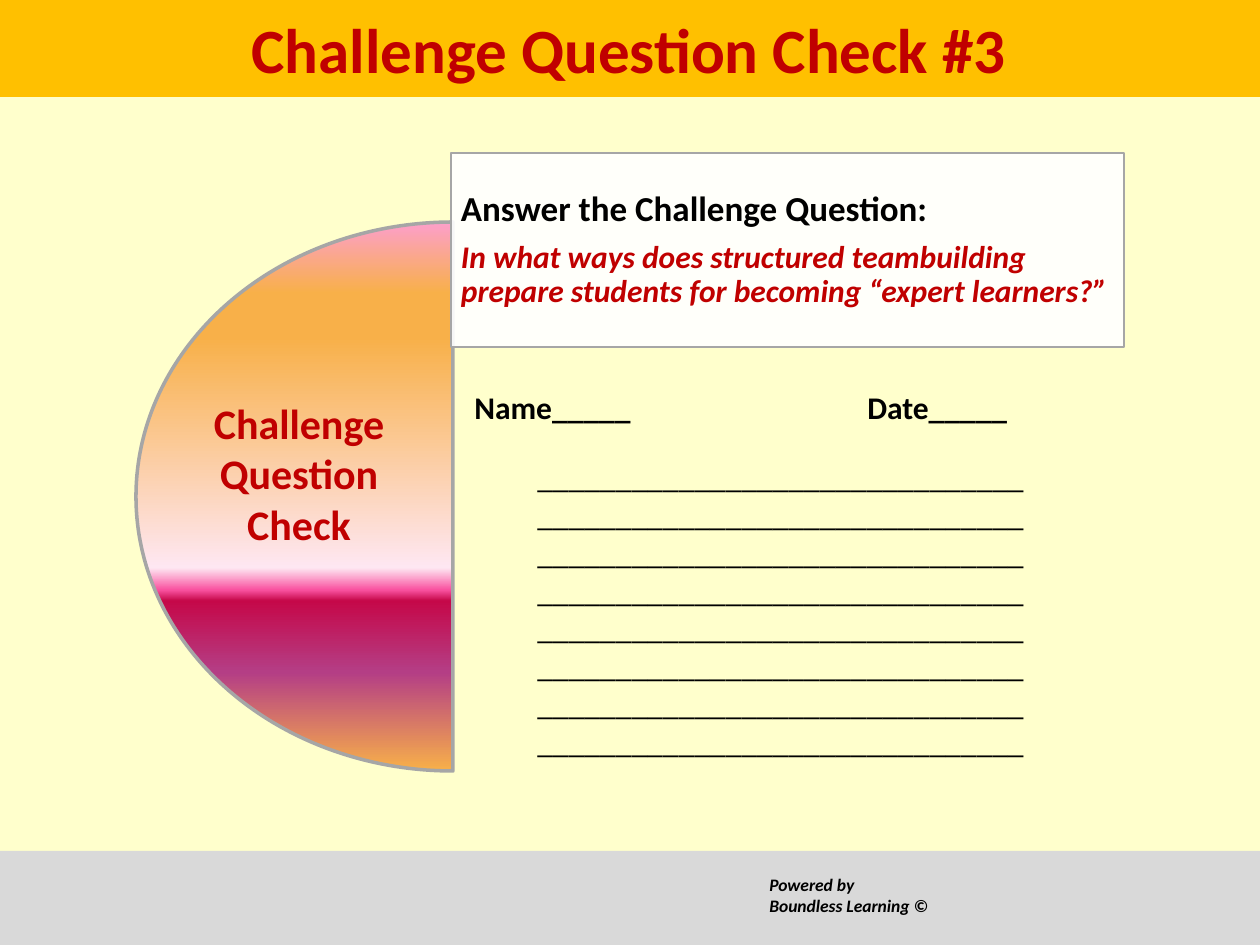
from dataclasses import dataclass
from typing import Optional

import lxml.etree
import pptx
import pptx.dml.color
import pptx.enum.shapes
import pptx.enum.text
import pptx.oxml.ns
import pptx.util

EMU_PER_PX = 914400 // 126
FONT = "Calibri"
COLORS = {
    "page": "FFFFCC",
    "banner": "FFC000",
    "footer": "D9D9D9",
    "outline": "A6A6A6",
    "panel": "FFFFFF",
    "accent": "C00000",
    "ink": "000000",
}
SUNSET = [(0, "FC9FCB"), (13, "F8B049"), (21, "F8B049"), (63, "FEE7F2"),
          (67, "F952A0"), (69, "C50849"), (82, "B43E85"), (100, "F8B049")]

SHAPES = pptx.enum.shapes.MSO_SHAPE
ANCHOR = pptx.enum.text.MSO_ANCHOR
ALIGN = pptx.enum.text.PP_ALIGN


@dataclass
class Box:
    left: int
    top: int
    width: int
    height: int

    def emu(self) -> list[int]:
        return [px(v) for v in (self.left, self.top, self.width, self.height)]


@dataclass
class Line:
    text: str
    size: int
    color: str = "ink"
    bold: bool = True
    italic: bool = False
    align: ALIGN = ALIGN.LEFT
    spacing: Optional[float] = None
    after: int = 0


def px(length: int) -> int:
    return length * EMU_PER_PX


def rgb(name: str) -> pptx.dml.color.RGBColor:
    return pptx.dml.color.RGBColor.from_string(COLORS[name])


def write(shape, lines: list[Line], anchor=ANCHOR.TOP, inset: Optional[int] = None) -> None:
    frame = shape.text_frame
    frame.word_wrap = True
    frame.auto_size = pptx.enum.text.MSO_AUTO_SIZE.NONE
    frame.vertical_anchor = anchor
    if inset is not None:
        frame.margin_left = frame.margin_right = px(inset)
        frame.margin_top = frame.margin_bottom = px(inset)
    for index, line in enumerate(lines):
        paragraph = frame.add_paragraph() if index else frame.paragraphs[0]
        paragraph.alignment = line.align
        paragraph.space_after = pptx.util.Pt(line.after)
        if line.spacing:
            paragraph.line_spacing = line.spacing
        run = paragraph.add_run()
        run.text = line.text
        run.font.name = FONT
        run.font.size = pptx.util.Pt(line.size)
        run.font.bold = line.bold
        run.font.italic = line.italic
        run.font.color.rgb = rgb(line.color)


def add_text(slide, box: Box, lines: list[Line], anchor=ANCHOR.TOP) -> None:
    write(slide.shapes.add_textbox(*box.emu()), lines, anchor)


def add_shape(slide, kind, box: Box, fill: Optional[str] = None, outline: int = 0):
    shape = slide.shapes.add_shape(kind, *box.emu())
    shape.shadow.inherit = False
    if fill:
        shape.fill.solid()
        shape.fill.fore_color.rgb = rgb(fill)
    if outline:
        shape.line.color.rgb = rgb("outline")
        shape.line.width = pptx.util.Pt(outline)
    else:
        shape.line.fill.background()
    return shape


def fill_downward(shape, stops: list[tuple[int, str]]) -> None:
    """Fill with a gradient from top to bottom; stops are (percent, hex)."""
    shape.fill.gradient()
    qn = pptx.oxml.ns.qn
    gradient = shape.fill._xPr.find(qn("a:gradFill"))
    for child in list(gradient):
        gradient.remove(child)
    stop_list = lxml.etree.SubElement(gradient, qn("a:gsLst"))
    for percent, color in stops:
        stop = lxml.etree.SubElement(stop_list, qn("a:gs"), pos=str(percent * 1000))
        lxml.etree.SubElement(stop, qn("a:srgbClr"), val=color)
    lxml.etree.SubElement(gradient, qn("a:lin"), ang="5400000", scaled="0")


def set_opacity(shape, percent: int) -> None:
    qn = pptx.oxml.ns.qn
    color = shape.fill._xPr.find(qn("a:solidFill")).find(qn("a:srgbClr"))
    lxml.etree.SubElement(color, qn("a:alpha"), val=str(percent * 1000))


def add_question(slide) -> None:
    half_disc = add_shape(slide, SHAPES.PIE, Box(136, 222, 634, 549), outline=2)
    half_disc.adjustments[0] = 54
    half_disc.adjustments[1] = 162
    fill_downward(half_disc, SUNSET)

    panel = add_shape(slide, SHAPES.RECTANGLE, Box(451, 153, 673, 194), "panel", 1)
    set_opacity(panel, 90)
    write(panel, [
        Line("Answer the Challenge Question:", 20, spacing=0.9, after=7),
        Line("In what ways does structured teambuilding prepare students "
             "for becoming “expert learners?”", 18, "accent", italic=True, spacing=0.9),
    ], ANCHOR.MIDDLE, inset=10)

    add_text(slide, Box(157, 384, 284, 178),
             [Line("Challenge Question Check", 24, "accent", align=ALIGN.CENTER)],
             ANCHOR.MIDDLE)


def add_answer_form(slide) -> None:
    rows, underscores_per_row = 8, 31
    add_text(slide, Box(525, 451, 514, 318),
             [Line("_" * (rows * underscores_per_row), 18, bold=False)])
    for label, left in (("Name", 462), ("Date", 855)):
        add_text(slide, Box(left, 382, 242, 51), [Line(label + "_____", 18)])


def add_title(slide) -> None:
    title = slide.shapes.title
    title.left, title.top, title.width, title.height = Box(-2, 0, 1262, 97).emu()
    title.fill.solid()
    title.fill.fore_color.rgb = rgb("banner")
    write(title, [Line("Challenge Question Check #3", 36, "accent", align=ALIGN.CENTER)],
          ANCHOR.MIDDLE)


def add_footer_credit(slide) -> None:
    credit = add_shape(slide, SHAPES.RECTANGLE, Box(757, 868, 213, 77), "footer")
    write(credit, [Line(text, 10, italic=True)
                   for text in ("Powered by", "Boundless Learning ©")])


def main() -> None:
    deck = pptx.Presentation()
    deck.slide_width, deck.slide_height = px(1260), px(945)
    slide = deck.slides.add_slide(deck.slide_layouts[5])
    slide.background.fill.solid()
    slide.background.fill.fore_color.rgb = rgb("page")

    add_shape(slide, SHAPES.RECTANGLE, Box(0, 851, 1260, 94), "footer")
    add_question(slide)
    add_answer_form(slide)
    add_title(slide)
    add_footer_credit(slide)
    deck.save("out.pptx")


if __name__ == "__main__":
    main()
